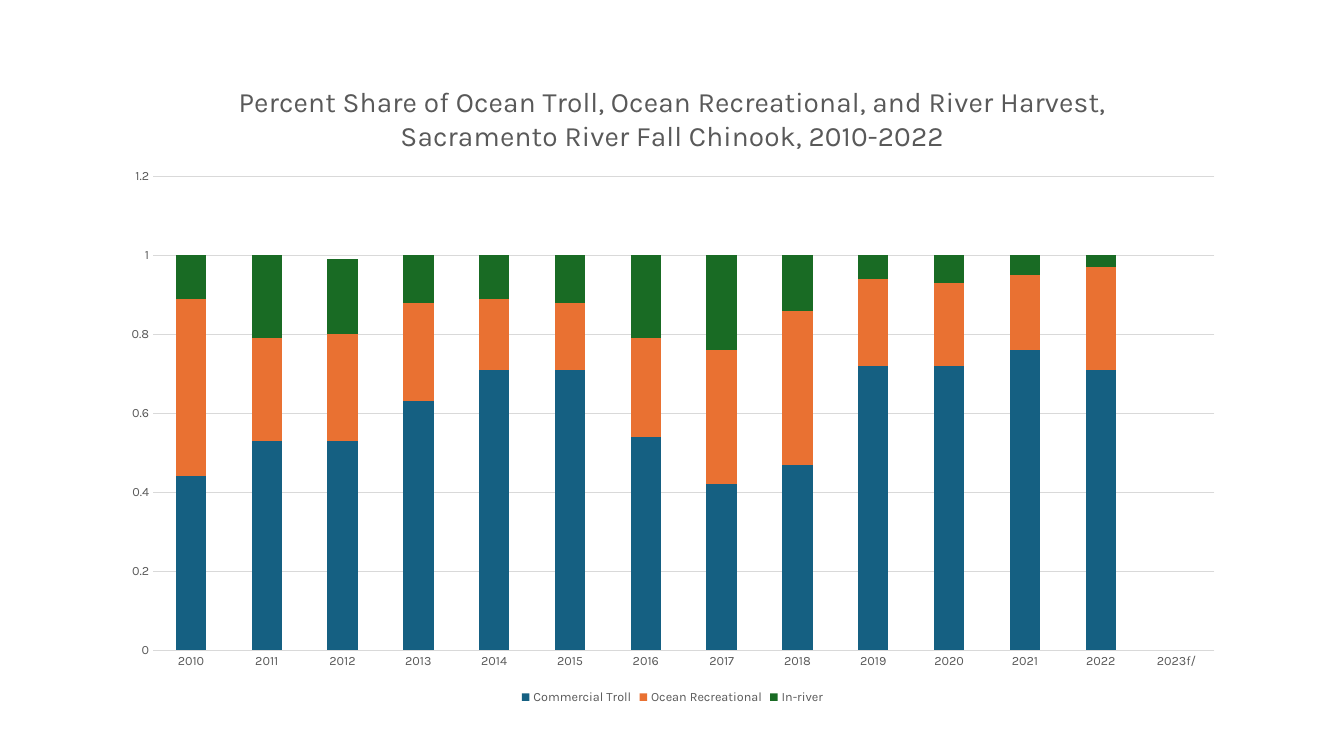
from dataclasses import dataclass
from typing import Any

from lxml import etree
from pptx import Presentation
from pptx import util as u
from pptx.chart import data as cd
from pptx.dml import color as col
from pptx.enum import chart as ch

HUES = {"troll": "156082", "ocean": "E97132", "river": "196B24", "text": "595959", "grid": "D9D9D9"}
FACE = "Karla"
TITLE = ("Percent Share of Ocean Troll, Ocean Recreational, and River Harvest, "
         "Sacramento River Fall Chinook, 2010-2022")
YEARS = [str(year) for year in range(2010, 2023)] + ["2023f/"]
PLOT = {"layoutTarget": "inner", "xMode": "edge", "yMode": "edge",
        "x": "0.04", "y": "0.18", "w": "0.94", "h": "0.73"}


@dataclass(frozen=True)
class Share:
    name: str
    hue: str
    vals: tuple[float, ...]


SHARES = [
    Share("Commercial Troll", "troll",
          (0.44, 0.53, 0.53, 0.63, 0.71, 0.71, 0.54, 0.42, 0.47, 0.72, 0.72, 0.76, 0.71)),
    Share("Ocean Recreational", "ocean",
          (0.45, 0.26, 0.27, 0.25, 0.18, 0.17, 0.25, 0.34, 0.39, 0.22, 0.21, 0.19, 0.26)),
    Share("In-river", "river",
          (0.11, 0.21, 0.19, 0.12, 0.11, 0.12, 0.21, 0.24, 0.14, 0.06, 0.07, 0.05, 0.03)),
]


def apply(item: Any, vals: dict[str, Any]) -> None:
    for key, val in vals.items():
        setattr(item, key, val)


def tint(hue: str) -> col.RGBColor:
    return col.RGBColor.from_string(HUES[hue])


def style(font: Any, size: int) -> None:
    apply(font, {"name": FACE, "size": u.Pt(size), "bold": False})
    font.color.rgb = tint("text")


def rule(line: Any) -> None:
    line.width = u.Pt(0.75)
    line.color.rgb = tint("grid")


def place(chart: Any) -> None:
    area = chart.plots[0]._element.getparent()
    for old in area.findall("{*}layout"):
        area.remove(old)
    space = etree.QName(area).namespace
    outer = etree.Element(f"{{{space}}}layout")
    inner = etree.SubElement(outer, f"{{{space}}}manualLayout")
    for key, val in PLOT.items():
        etree.SubElement(inner, f"{{{space}}}{key}").set("val", val)
    area.insert(0, outer)


def head(chart: Any) -> None:
    chart.has_title = True
    chart.chart_title.include_in_layout = False
    para = chart.chart_title.text_frame.paragraphs[0]
    run = para.add_run()
    run.text = TITLE
    style(para.font, 20)
    style(run.font, 20)


def axes(chart: Any) -> None:
    base, side = chart.category_axis, chart.value_axis
    for axis in (base, side):
        apply(axis, {"major_tick_mark": ch.XL_TICK_MARK.NONE,
                     "minor_tick_mark": ch.XL_TICK_MARK.NONE})
        style(axis.tick_labels.font, 9)
    apply(side, {"minimum_scale": 0, "maximum_scale": 1.2, "major_unit": 0.2,
                 "has_major_gridlines": True})
    apply(side.tick_labels, {"number_format": "General", "number_format_is_linked": False})
    rule(base.format.line)
    rule(side.major_gridlines.format.line)
    side.format.line.fill.background()


def draw(slide: Any) -> None:
    data = cd.CategoryChartData()
    data.categories = YEARS
    for share in SHARES:
        data.add_series(share.name, (*share.vals, None))
    box = [u.Inches(n) for n in (1.07, 0.59, 11.2, 6.44)]
    chart = slide.shapes.add_chart(ch.XL_CHART_TYPE.COLUMN_STACKED, *box, data).chart
    style(chart.font, 10)
    head(chart)
    axes(chart)
    apply(chart.plots[0], {"gap_width": 150, "overlap": 100, "vary_by_categories": False})
    for bars, share in zip(chart.plots[0].series, SHARES):
        bars.format.fill.solid()
        bars.format.fill.fore_color.rgb = tint(share.hue)
    chart.has_legend = True
    apply(chart.legend, {"position": ch.XL_LEGEND_POSITION.BOTTOM, "include_in_layout": False})
    style(chart.legend.font, 9)
    place(chart)


def main() -> None:
    deck = Presentation()
    apply(deck, {"slide_width": u.Inches(13.33), "slide_height": u.Inches(7.5)})
    draw(deck.slides.add_slide(deck.slide_layouts[6]))
    deck.save("out.pptx")


if __name__ == "__main__":
    main()
